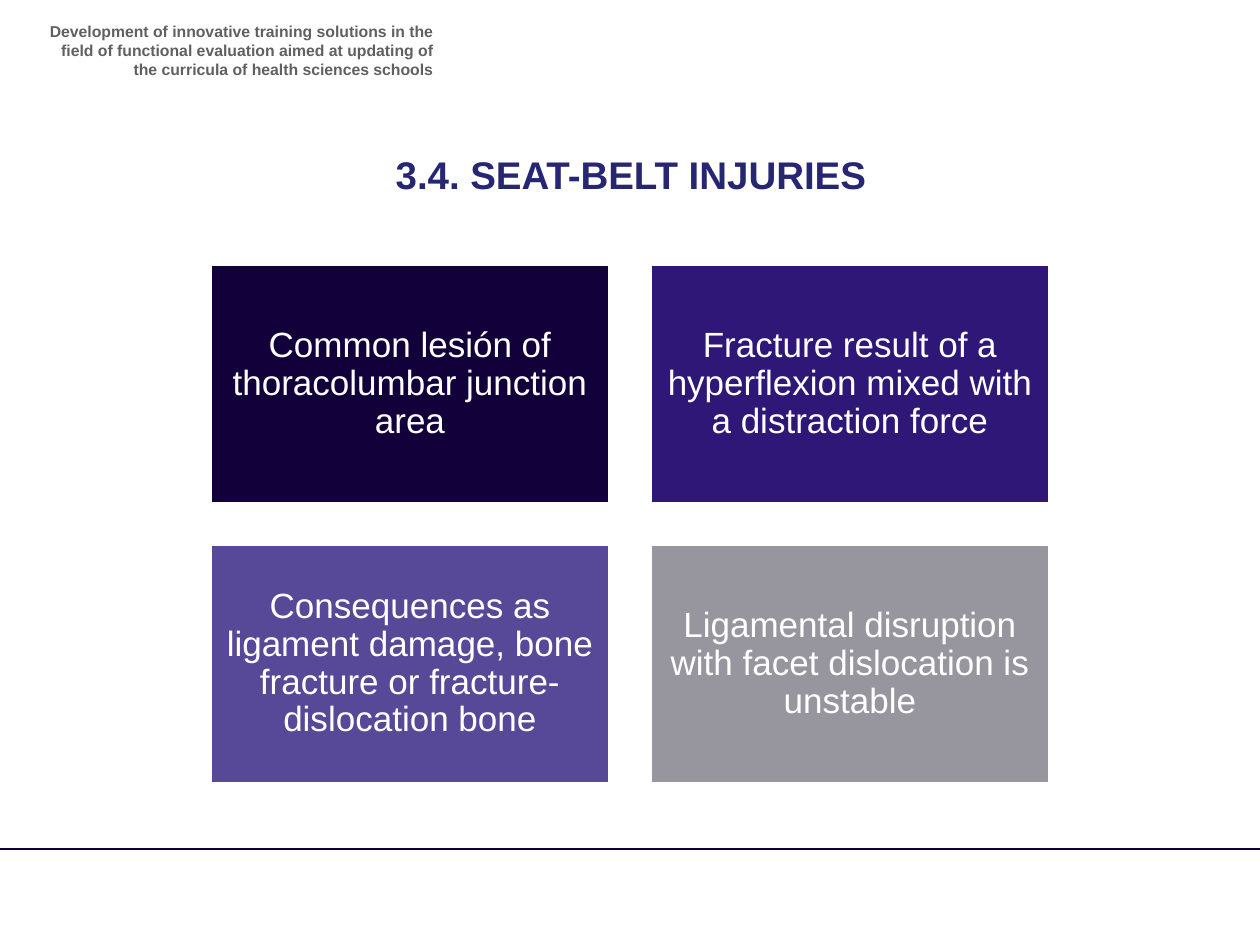
from dataclasses import dataclass

from lxml import etree
from pptx import Presentation
from pptx.dml.color import RGBColor
from pptx.enum.shapes import MSO_CONNECTOR, MSO_SHAPE
from pptx.enum.text import MSO_ANCHOR, MSO_AUTO_SIZE, PP_ALIGN
from pptx.oxml.ns import qn
from pptx.util import Emu, Pt

RECTANGLE = MSO_SHAPE.RECTANGLE
STRAIGHT = MSO_CONNECTOR.STRAIGHT
TOP, MIDDLE = MSO_ANCHOR.TOP, MSO_ANCHOR.MIDDLE
CENTER, RIGHT = PP_ALIGN.CENTER, PP_ALIGN.RIGHT
TITLE_ONLY_LAYOUT = 5
EMU_PER_PX = 914400 / 126


@dataclass(frozen=True)
class Theme:
    font: str = "Arial"
    header: str = "606060"
    title: str = "262673"
    white: str = "FFFFFF"
    rule: str = "12003B"
    header_size: int = 9
    title_size: int = 22
    card_size: int = 20


@dataclass(frozen=True)
class Box:
    left: int
    top: int
    width: int
    height: int


@dataclass(frozen=True)
class Card:
    text: str
    fill: str


THEME = Theme()
SLIDE = Box(0, 0, 1260, 945)
HEADER = Box(35, 16, 411, 59)
TITLE = Box(57, 145, 1148, 59)
FIRST_CARD = Box(210, 264, 400, 240)
CARD_GAP = 40
CARD_COLUMNS = 2
RULE_TOP = 849
CARDS = (
    Card("Common lesión of thoracolumbar junction area", "12003B"),
    Card("Fracture result of a hyperflexion mixed with a distraction force", "2F1777"),
    Card("Consequences as ligament damage, bone fracture or fracture-dislocation bone", "584898"),
    Card("Ligamental disruption with facet dislocation is unstable", "97959D"),
)


def px(length: int) -> Emu:
    return Emu(round(length * EMU_PER_PX))


def place(box: Box) -> tuple[Emu, Emu, Emu, Emu]:
    return px(box.left), px(box.top), px(box.width), px(box.height)


def write_text(shape, text: str, *, size: int, color: str, bold: bool = False,
               align=CENTER, anchor=TOP, inset_x: int = 13, inset_y: int = 6,
               line_spacing: float = 1.0) -> None:
    frame = shape.text_frame
    frame.word_wrap = True
    frame.auto_size = MSO_AUTO_SIZE.NONE
    frame.vertical_anchor = anchor
    frame.margin_left = frame.margin_right = px(inset_x)
    frame.margin_top = frame.margin_bottom = px(inset_y)
    paragraph = frame.paragraphs[0]
    paragraph.alignment = align
    paragraph.line_spacing = line_spacing
    paragraph.space_before = Pt(0)
    run = paragraph.add_run()
    run.text = text
    run.font.name = THEME.font
    run.font.size = Pt(size)
    run.font.bold = bold
    run.font.color.rgb = RGBColor.from_string(color)


def add_rule(slide, top: int) -> None:
    rule = slide.shapes.add_connector(STRAIGHT, 0, px(top), px(SLIDE.width), px(top))
    rule.line.color.rgb = RGBColor.from_string(THEME.rule)
    rule.line.width = Pt(1)
    properties = rule._element.find(qn("p:spPr"))
    etree.SubElement(properties, qn("a:effectLst"))


def add_card(slide, card: Card, box: Box) -> None:
    shape = slide.shapes.add_shape(RECTANGLE, *place(box))
    shape.shadow.inherit = False
    shape.fill.solid()
    shape.fill.fore_color.rgb = RGBColor.from_string(card.fill)
    shape.line.color.rgb = RGBColor.from_string(THEME.white)
    shape.line.width = Pt(2)
    write_text(shape, card.text, size=THEME.card_size, color=THEME.white,
               anchor=MIDDLE, inset_x=10, inset_y=10, line_spacing=0.9)


def main() -> None:
    presentation = Presentation()
    presentation.slide_width = px(SLIDE.width)
    presentation.slide_height = px(SLIDE.height)
    slide = presentation.slides.add_slide(presentation.slide_layouts[TITLE_ONLY_LAYOUT])

    # Footer rule and project header
    add_rule(slide, RULE_TOP)
    header = slide.shapes.add_textbox(*place(HEADER))
    write_text(header, "Development of innovative training solutions in the ﬁeld of functional "
               "evaluation aimed at updating of the curricula of health sciences schools",
               size=THEME.header_size, color=THEME.header, bold=True, align=RIGHT)

    # Title
    title = slide.shapes.title
    title.left, title.top, title.width, title.height = place(TITLE)
    write_text(title, "3.4. SEAT-BELT INJURIES", size=THEME.title_size,
               color=THEME.title, bold=True)

    # Grid of cards
    for index, card in enumerate(CARDS):
        row, column = divmod(index, CARD_COLUMNS)
        left = FIRST_CARD.left + column * (FIRST_CARD.width + CARD_GAP)
        top = FIRST_CARD.top + row * (FIRST_CARD.height + CARD_GAP)
        add_card(slide, card, Box(left, top, FIRST_CARD.width, FIRST_CARD.height))

    presentation.save("out.pptx")


if __name__ == "__main__":
    main()
